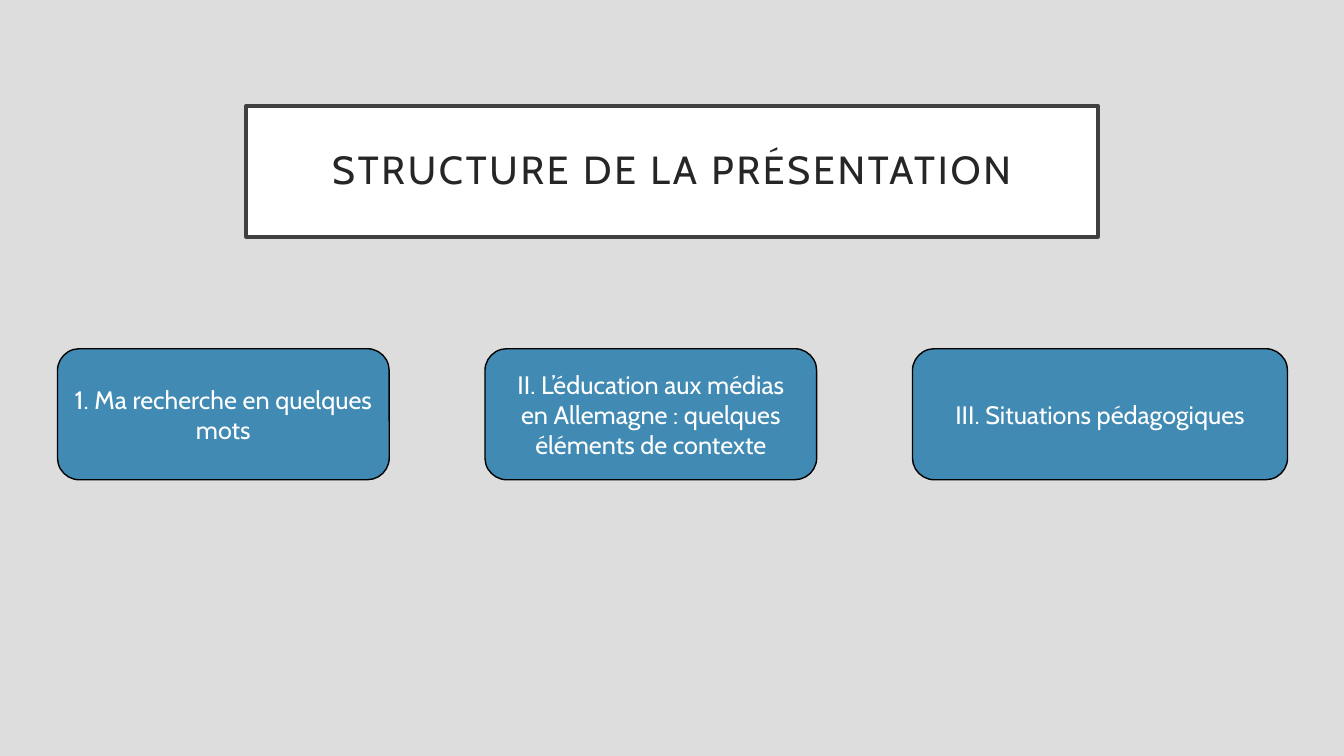
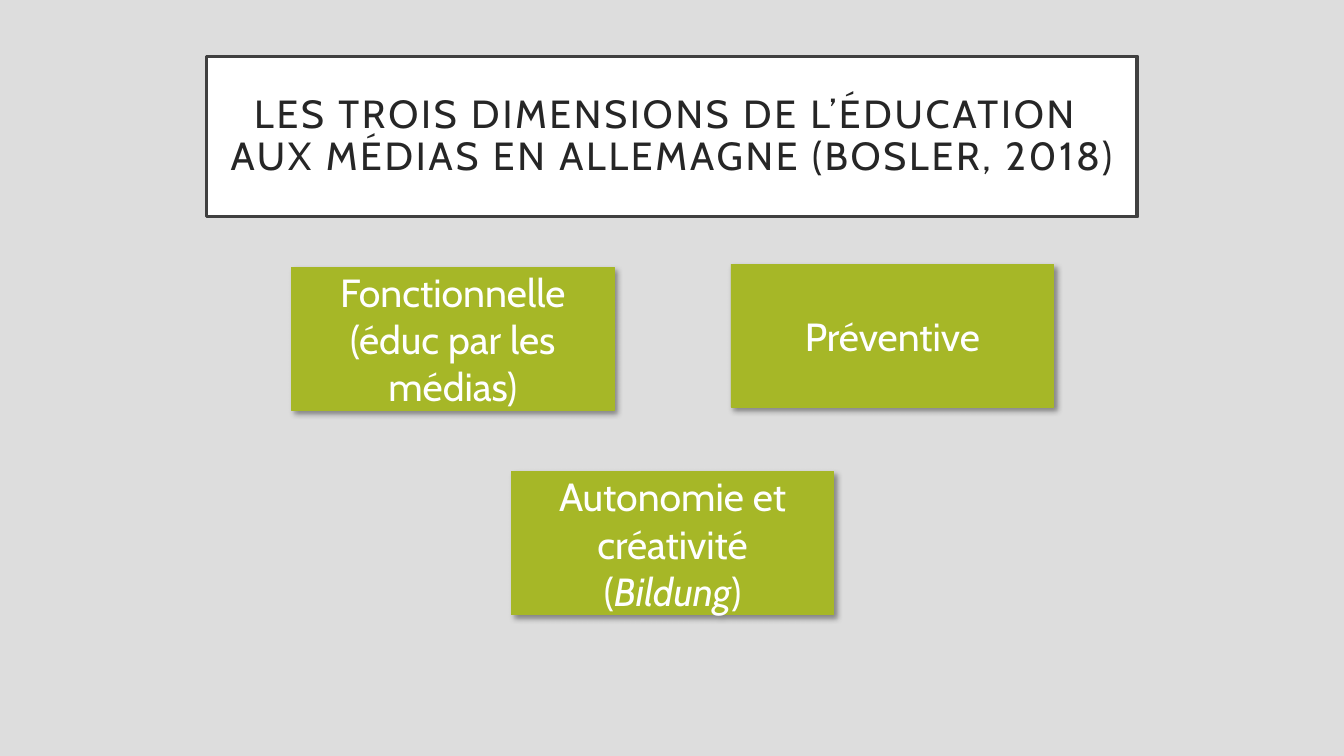
"""Build two slides: the outline of a talk and the three dimensions of media education."""
from lxml import etree
from pptx import Presentation
from pptx.dml.color import RGBColor
from pptx.enum.shapes import MSO_SHAPE as SHAPE
from pptx.enum.text import MSO_ANCHOR as ANCHOR, PP_ALIGN as ALIGN
from pptx.oxml import parse_xml
from pptx.oxml.ns import nsdecls
from pptx.util import Pt

PX = 9144
FONT = "Cabin"
GREY, WHITE, BLACK = "DDDDDD", "FFFFFF", "000000"
INK, FRAME, BLUE, GREEN = "262626", "404040", "418AB3", "A6B727"
SHADOW = (
    f'<a:effectLst {nsdecls("a")}>'
    f'<a:outerShdw blurRad="{Pt(4)}" dist="{Pt(3)}" dir="2700000" algn="tl" rotWithShape="0">'
    f'<a:srgbClr val="{BLACK}"><a:alpha val="40000"/></a:srgbClr>'
    '</a:outerShdw></a:effectLst>'
)


def rgb(value):
    """Turn a hex string into a colour."""
    return RGBColor.from_string(value)


def add_box(s, kind, place, fill, line, width, lines, size, color):
    """Add a filled shape with centred text; each line is a tuple of runs."""
    sp = s.shapes.add_shape(kind, *(v * PX for v in place))
    sp.shadow.inherit = False
    sp.fill.solid()
    sp.fill.fore_color.rgb = rgb(fill)
    sp.line.color.rgb = rgb(line)
    sp.line.width = Pt(width)
    tf = sp.text_frame
    tf.word_wrap = True
    tf.vertical_anchor = ANCHOR.MIDDLE
    for i, runs in enumerate(lines):
        p = tf.add_paragraph() if i else tf.paragraphs[0]
        p.text = runs[0]
        for text in runs[1:]:
            p.add_run().text = text
        p.alignment = ALIGN.CENTER
        for r in p.runs:
            r.font.name = FONT
            r.font.size = Pt(size)
            r.font.color.rgb = rgb(color)
    return sp


prs = Presentation()
prs.slide_width, prs.slide_height = 1333 * PX, 750 * PX
background = prs.slide_master.background.fill
background.solid()
background.fore_color.rgb = rgb(GREY)

titles = [
    ("STRUCTURE DE LA PRÉSENTATION", (244, 105, 845, 130)),
    ("LES TROIS DIMENSIONS DE L’ÉDUCATION \nAUX MÉDIAS EN ALLEMAGNE (BOSLER, 2018)",
     (205, 56, 923, 159)),
]
slides = []
for title, place in titles:
    s = prs.slides.add_slide(prs.slide_layouts[6])
    slides.append(s)
    sp = add_box(s, SHAPE.RECTANGLE, place, WHITE, FRAME, 2.5, [(title,)], 28, INK)
    tf = sp.text_frame
    tf.margin_left = tf.margin_right = tf.margin_top = tf.margin_bottom = 20 * PX
    p = tf.paragraphs[0]
    p.line_spacing = 0.9
    for r in p.runs:
        r.font._element.set("spc", "200")

outline, dimensions = slides

parts = [
    ("1. Ma recherche en quelques mots", 329),
    ("II. L’éducation aux médias en Allemagne : quelques éléments de contexte", 329),
    ("III. Situations pédagogiques", 372),
]
left, gap = 57, 95
for text, width in parts:
    add_box(outline, SHAPE.ROUNDED_RECTANGLE, (left, 346, width, 130),
            BLUE, BLACK, 1, [(text,)], 18, WHITE)
    left += width + gap

cards = [
    (289, 265, [("Fonctionnelle (éduc par les médias)",)]),
    (507, 468, [("Autonomie et créativité",), ("(", "Bildung", ")")]),
    (725, 262, [("Préventive",)]),
]
for x, y, lines in cards:
    sp = add_box(dimensions, SHAPE.RECTANGLE, (x, y, 320, 142),
                 GREEN, GREEN, 0.5, lines, 28, WHITE)
    props = sp._element.spPr
    props.replace(props.find("{*}effectLst"), parse_xml(SHADOW))
    for p in sp.text_frame.paragraphs:
        for r in p.runs[1:2]:
            r.font.italic = True

prs.save("out.pptx")
